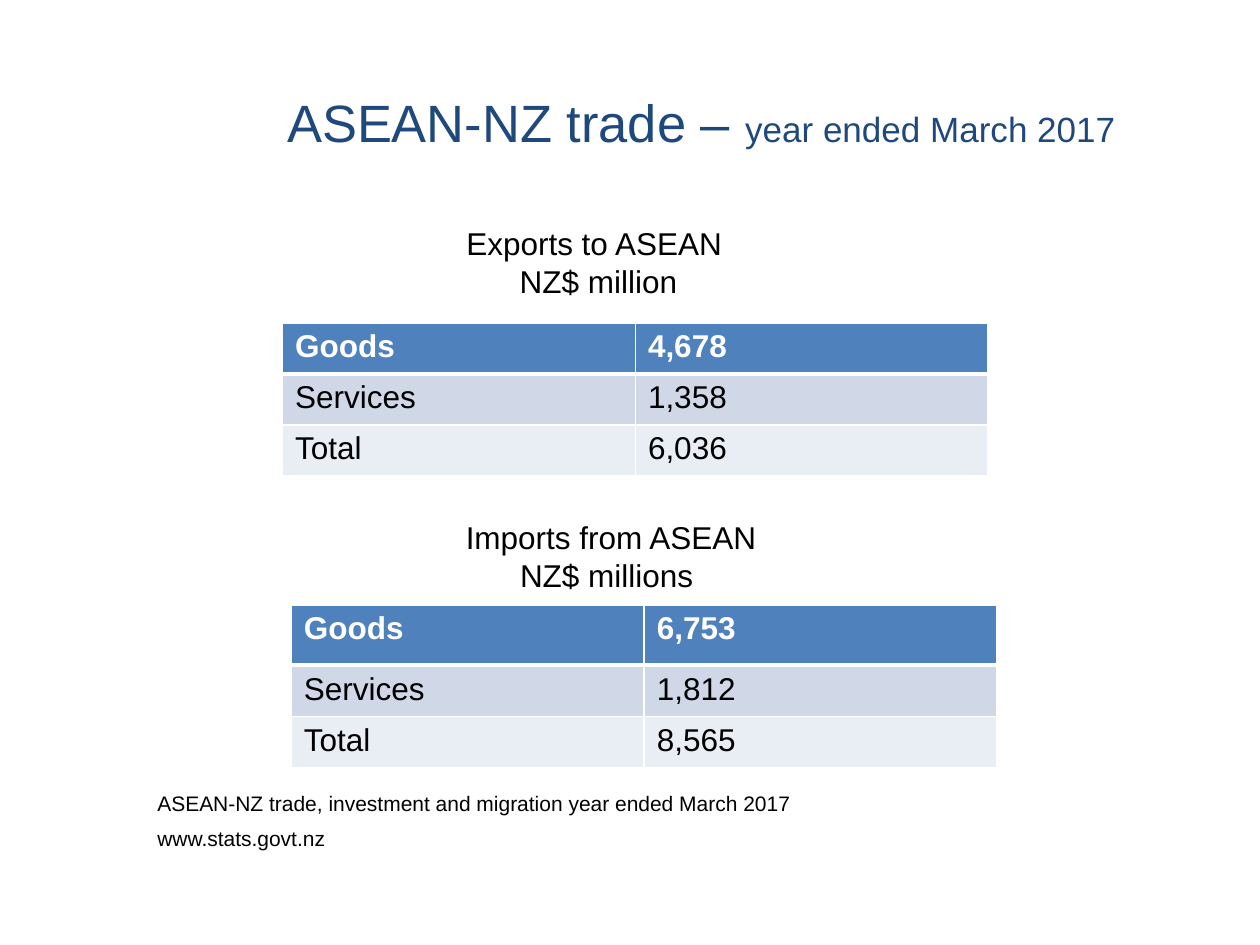
from lxml import etree
from pptx import Presentation
from pptx import util as u
from pptx.dml.color import RGBColor
from pptx.enum import text as t
from pptx.oxml import ns

Pt = u.Pt

# Content: each run is (text, style); places are left, top, width, height
TITLE = [[("ASEAN-NZ trade – ", "title"), ("year ended March 2017", "sub")]]
NOTE = [
    [("ASEAN-NZ trade, investment and migration year ended March 2017", "note")],
    [("www.stats.govt.nz", "note")],
]
FLOWS = [
    {
        "lines": ["Exports to ASEAN ", "NZ$ million"],
        "head": (234, 124.6),
        "grid": (161.5, 184.5),
        "high": (29.2, 29.2, 29.2),
        "rows": [("Goods", "4,678"), ("Services", "1,358"), ("Total", "6,036")],
    },
    {
        "lines": ["Imports from ASEAN", "NZ$ millions "],
        "head": (241.2, 292.3),
        "grid": (166.5, 345.6),
        "high": (34.5, 29.2, 29.2),
        "rows": [("Goods", "6,753"), ("Services", "1,812"), ("Total", "8,565")],
    },
]
HEAD_W, HEAD_H, COL_W = 216, 51, 201.6

THEME = {
    "font": "Arial",
    "rule": "FFFFFF",
    "fills": ("4F81BD", "D0D8E8", "E9EDF4"),
    "title": ("1F497D", {"size": Pt(30)}),
    "sub": ("1F497D", {"size": Pt(20)}),
    "text": ("000000", {"size": Pt(18), "bold": False}),
    "top": ("FFFFFF", {"size": Pt(18), "bold": True}),
    "note": ("000000", {"size": Pt(12)}),
}


def put(obj, vals):
    for key, val in vals.items():
        setattr(obj, key, val)


def write(frame, paras, form=None, gap=0):
    for i, runs in enumerate(paras):
        para = frame.add_paragraph() if i else frame.paragraphs[0]
        put(para, form or {})
        if i and gap:
            para.space_before = Pt(gap)
        for words, style in runs:
            run = para.add_run()
            run.text = words
            ink, vals = THEME[style]
            put(run.font, {"name": THEME["font"], **vals})
            run.font.color.rgb = RGBColor.from_string(ink)


def box(slide, place, paras, form=None, gap=0):
    frame = slide.shapes.add_textbox(*map(Pt, place)).text_frame
    frame.word_wrap = True
    write(frame, paras, form, gap)


def edge(cell, widths):
    props = cell._tc.get_or_add_tcPr()
    for side, wide in widths.items():
        line = etree.SubElement(props, ns.qn("a:ln" + side), w=str(Pt(wide)))
        fill = etree.SubElement(line, ns.qn("a:solidFill"))
        etree.SubElement(fill, ns.qn("a:srgbClr"), val=THEME["rule"])


def grid(slide, flow):
    rows, high = flow["rows"], flow["high"]
    cols = len(rows[0])
    place = (*flow["grid"], COL_W * cols, sum(high))
    table = slide.shapes.add_table(len(rows), cols, *map(Pt, place)).table
    for col in table.columns:
        col.width = Pt(COL_W)
    for r, row in enumerate(rows):
        table.rows[r].height = Pt(high[r])
        for c, words in enumerate(row):
            cell = table.cell(r, c)
            # The rule below the top row is thicker
            edge(cell, {"L": 1, "R": 1, "T": 3 if r == 1 else 1, "B": 1 if r else 3})
            cell.fill.solid()
            cell.fill.fore_color.rgb = RGBColor.from_string(THEME["fills"][r])
            write(cell.text_frame, [[(words, "text" if r else "top")]])


def main():
    deck = Presentation()
    put(deck, {"slide_width": Pt(720), "slide_height": Pt(540)})
    slide = deck.slides.add_slide(deck.slide_layouts[6])

    # Title
    box(slide, (157, 48.2, 516.2, 72), TITLE)

    # Captions and tables
    for flow in FLOWS:
        lines = [[(line, "text")] for line in flow["lines"]]
        box(slide, (*flow["head"], HEAD_W, HEAD_H), lines,
            {"alignment": t.PP_ALIGN.CENTER})
        grid(slide, flow)

    # Source note
    box(slide, (82.8, 445.2, 505.4, 42), NOTE, {"line_spacing": 1.2}, 2.8)

    deck.save("out.pptx")


if __name__ == "__main__":
    main()
